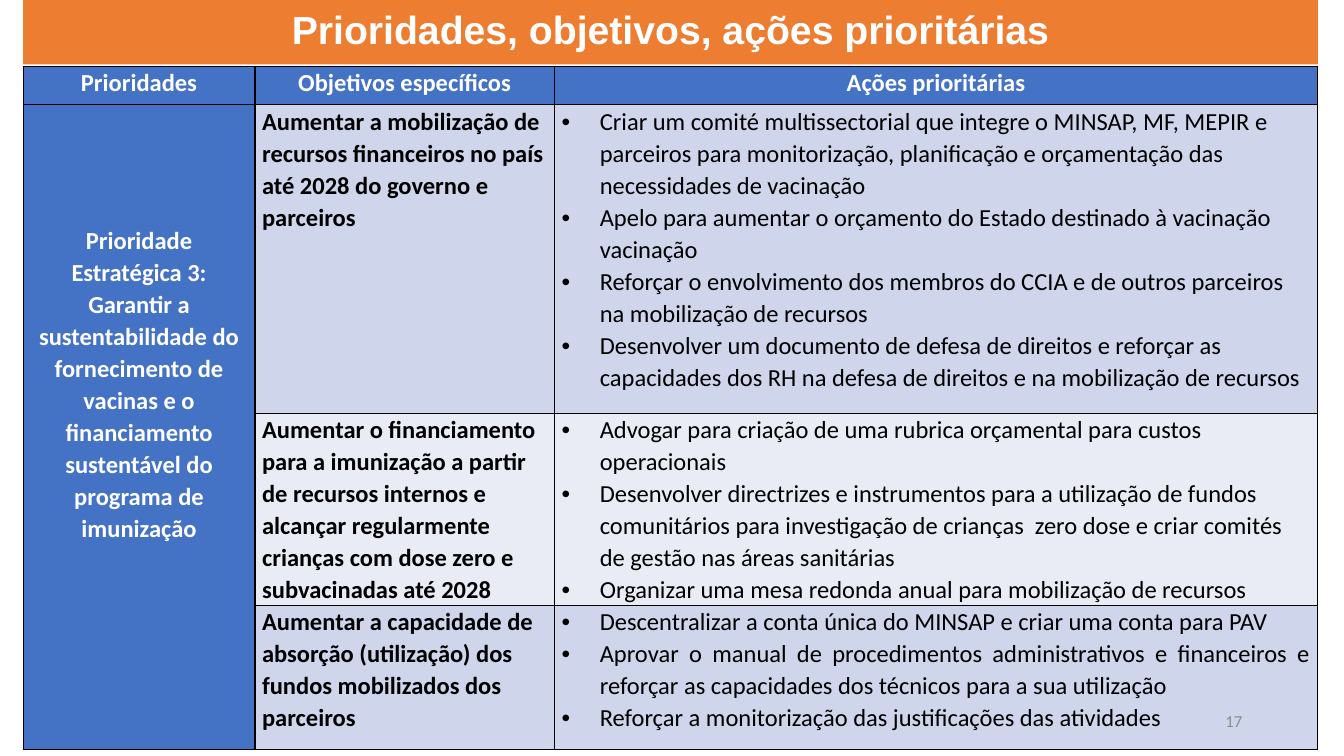
from lxml.etree import SubElement
from pptx import Presentation
from pptx.dml.color import RGBColor
from pptx.enum.text import MSO_ANCHOR, MSO_AUTO_SIZE, PP_ALIGN
from pptx.oxml.ns import qn
from pptx.util import Emu, Pt

PX = 9144
COLORS = {
    "orange": "ED7D31",
    "blue": "4472C4",
    "band": "CFD5EA",
    "light": "E9EBF5",
    "white": "FFFFFF",
    "black": "000000",
    "gray": "8C8C8C",
}
HEADERS = ["Prioridades", "Objetivos específicos", "Ações prioritárias"]
PRIORITY = (
    "Prioridade Estratégica 3: Garantir a sustentabilidade do fornecimento de "
    "vacinas e o financiamento sustentável do programa de imunização"
)
OBJECTIVES = [
    (
        "Aumentar a mobilização de recursos financeiros no país até 2028 do governo e parceiros",
        [
            "Criar um comité multissectorial que integre o MINSAP, MF, MEPIR e parceiros para "
            "monitorização, planificação e orçamentação das necessidades de vacinação",
            "Apelo para aumentar o orçamento do Estado destinado à vacinação vacinação",
            "Reforçar o envolvimento dos membros do CCIA e de outros parceiros na mobilização de recursos",
            "Desenvolver um documento de defesa de direitos e reforçar as capacidades dos RH "
            "na defesa de direitos e na mobilização de recursos",
        ],
        "band",
        PP_ALIGN.LEFT,
    ),
    (
        "Aumentar o financiamento para a imunização a partir de recursos internos e alcançar "
        "regularmente crianças com dose zero e subvacinadas até 2028",
        [
            "Advogar para criação de uma rubrica orçamental para custos operacionais",
            "Desenvolver directrizes e instrumentos para a utilização de fundos comunitários para "
            "investigação de crianças  zero dose e criar comités de gestão nas áreas sanitárias",
            "Organizar uma mesa redonda anual para mobilização de recursos",
        ],
        "light",
        PP_ALIGN.LEFT,
    ),
    (
        "Aumentar a capacidade de absorção (utilização) dos fundos mobilizados dos parceiros",
        [
            "Descentralizar a conta única do MINSAP e criar uma conta para PAV",
            "Aprovar o manual de procedimentos administrativos e financeiros e reforçar as "
            "capacidades dos técnicos para a sua utilização",
            "Reforçar a monitorização das justificações das atividades",
        ],
        "band",
        PP_ALIGN.JUSTIFY,
    ),
]


def px(length):
    return Emu(length * PX)


def set_values(target, values):
    for name, value in values.items():
        setattr(target, name, value)


def paint(target, color):
    target.fill.solid()
    target.fill.fore_color.rgb = RGBColor.from_string(COLORS[color])


def write(frame, texts, color, size=17.5, bold=False, name="Calibri",
          align=PP_ALIGN.LEFT, spacing=1.07, bullets=False):
    for index, text in enumerate(texts):
        paragraph = frame.add_paragraph() if index else frame.paragraphs[0]
        set_values(paragraph, {"alignment": align, "line_spacing": spacing,
                               "space_before": Pt(0), "space_after": Pt(0)})
        run = paragraph.add_run()
        run.text = text
        set_values(run.font, {"size": Pt(size), "bold": bold, "name": name})
        run.font.color.rgb = RGBColor.from_string(COLORS[color])
        if bullets:
            properties = paragraph._p.get_or_add_pPr()
            properties.set("marL", str(px(38)))
            properties.set("indent", str(px(-38)))
            SubElement(properties, qn("a:buFont"), typeface="Arial")
            SubElement(properties, qn("a:buChar"), char="•")


def add_borders(cell):
    properties = cell._tc.get_or_add_tcPr()
    for position, side in enumerate(("lnL", "lnR", "lnT", "lnB")):
        line = SubElement(properties, qn(f"a:{side}"), w=str(Pt(1)))
        fill = SubElement(line, qn("a:solidFill"))
        SubElement(fill, qn("a:srgbClr"), val=COLORS["black"])
        properties.remove(line)
        properties.insert(position, line)


def fill_cell(cell, texts, fill, color, **style):
    paint(cell, fill)
    write(cell.text_frame, texts, color, **style)


def add_title(slide, left, top, width, height):
    title = slide.shapes.title
    set_values(title, {"left": px(left), "top": px(top),
                       "width": px(width), "height": px(height)})
    paint(title, "orange")
    set_values(title.text_frame, {"auto_size": MSO_AUTO_SIZE.NONE, "word_wrap": True,
                                  "vertical_anchor": MSO_ANCHOR.MIDDLE})
    write(title.text_frame, ["Prioridades, objetivos, ações prioritárias"], "white",
          size=28, bold=True, name="Arial", align=PP_ALIGN.CENTER, spacing=0.9)


def add_priorities_table(slide, left, top, width, height):
    columns = [230, 297, width - 527]
    rows = [38, 306, 190, height - 534]
    table = slide.shapes.add_table(len(rows), len(columns), px(left), px(top),
                                   px(width), px(height)).table
    for column, size in zip(table.columns, columns):
        column.width = px(size)
    for row, size in zip(table.rows, rows):
        row.height = px(size)
    for cell in table.iter_cells():
        set_values(cell, {"margin_left": px(7), "margin_right": px(7),
                          "margin_top": 0, "margin_bottom": 0})
        add_borders(cell)
    heading = {"bold": True, "align": PP_ALIGN.CENTER}
    for column, text in enumerate(HEADERS):
        fill_cell(table.cell(0, column), [text], "blue", "white", **heading)
    priority = table.cell(1, 0)
    priority.merge(table.cell(3, 0))
    priority.margin_top = px(118)
    fill_cell(priority, [PRIORITY], "blue", "white", **heading)
    for row, (objective, actions, fill, align) in enumerate(OBJECTIVES, 1):
        fill_cell(table.cell(row, 1), [objective], fill, "black", bold=True)
        fill_cell(table.cell(row, 2), actions, fill, "black", align=align, bullets=True)


def add_page_number(slide, left, top, width, height):
    box = slide.shapes.add_textbox(px(left), px(top), px(width), px(height))
    set_values(box.text_frame, {"word_wrap": True, "vertical_anchor": MSO_ANCHOR.MIDDLE})
    write(box.text_frame, ["17"], "gray", size=12, align=PP_ALIGN.RIGHT, spacing=1.0)


def main():
    presentation = Presentation()
    set_values(presentation, {"slide_width": px(1333), "slide_height": px(750)})
    slide = presentation.slides.add_slide(presentation.slide_layouts[5])
    add_title(slide, 23, 0, 1284, 64)
    add_priorities_table(slide, 23, 66, 1284, 677)
    add_page_number(slide, 942, 695, 300, 40)
    presentation.save("out.pptx")


if __name__ == "__main__":
    main()
